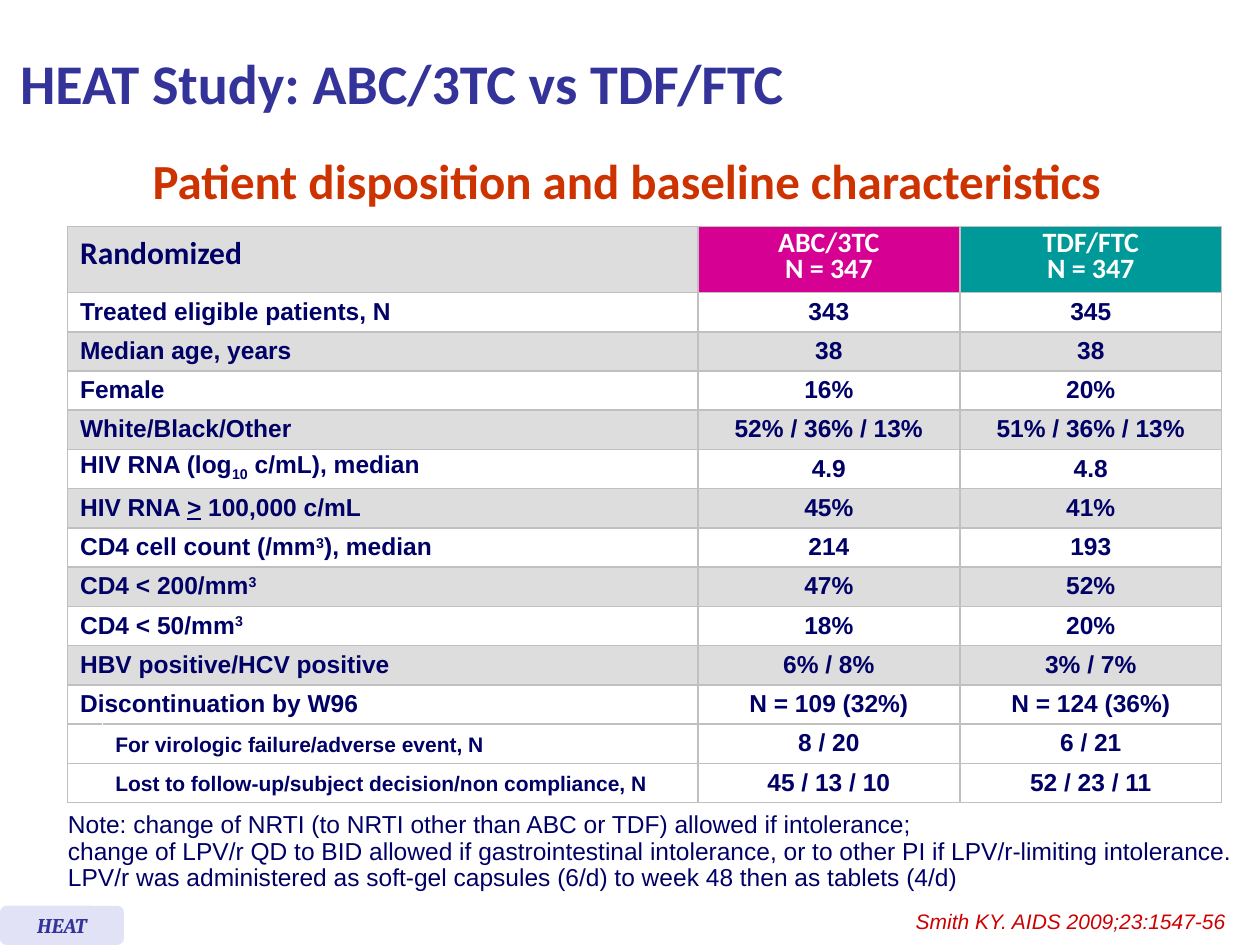
import pptx
import pptx.util
import pptx.dml.color
import pptx.enum.shapes
import pptx.enum.text
import pptx.oxml
import lxml.etree
from dataclasses import dataclass

Cm = pptx.util.Cm
Pt = pptx.util.Pt
Align = pptx.enum.text.PP_ALIGN
Anchor = pptx.enum.text.MSO_ANCHOR
SPACE = "http://schemas.openxmlformats.org/drawingml/2006/main"


@dataclass(frozen=True)
class Theme:
    """Hold the colours, fonts and type sizes."""
    title: str = "333399"
    lead: str = "CC3300"
    ink: str = "000066"
    cite: str = "CC0000"
    white: str = "FFFFFF"
    band: str = "DDDDDD"
    rule: str = "C0C0C0"
    tag: str = "E2E2F6"
    arms: tuple = ("D60093", "009999")
    head: str = "Calibri"
    body: str = "Arial"
    mark: str = "Cambria"
    huge: int = 32
    large: int = 28
    label: int = 18
    arm: int = 16
    text: int = 14
    small: int = 12
    lead_gap: float = 15.2


LOOK = Theme()

ROWS = [
    (["Treated eligible patients, N"], "343", "345"),
    (["Median age, years"], "38", "38"),
    (["Female"], "16%", "20%"),
    (["White/Black/Other"], "52% / 36% / 13%", "51% / 36% / 13%"),
    (["HIV RNA (log", ("10", "sub"), " c/mL), median"], "4.9", "4.8"),
    (["HIV RNA ", (">", "under"), " 100,000 c/mL"], "45%", "41%"),
    (["CD4 cell count (/mm", ("3", "sup"), "), median"], "214", "193"),
    (["CD4 < 200/mm", ("3", "sup")], "47%", "52%"),
    (["CD4 < 50/mm", ("3", "sup")], "18%", "20%"),
    (["HBV positive/HCV positive"], "6% / 8%", "3% / 7%"),
    (["Discontinuation by W96"], "N = 109 (32%)", "N = 124 (36%)"),
]
CAUSES = [
    (["For virologic failure/adverse event, N"], "8 / 20", "6 / 21"),
    (["Lost to follow-up/subject decision/non compliance, N"],
     "45 / 13 / 10", "52 / 23 / 11"),
]
NOTES = [
    "Note: change of NRTI (to NRTI other than ABC or TDF) allowed if intolerance;",
    "change of LPV/r QD to BID allowed if gastrointestinal intolerance, "
    "or to other PI if LPV/r-limiting intolerance.",
    "LPV/r was administered as soft-gel capsules (6/d) to week 48 then as tablets (4/d)",
]


def tint(code):
    """Turn a hex code into a colour."""
    return pptx.dml.color.RGBColor.from_string(code)


def style(para, face, size, color, bold=False, slant=False, align=Align.LEFT, gap=None):
    """Format one paragraph."""
    para.alignment = align
    if gap is not None:
        para.line_spacing = gap
    font = para.font
    font.name, font.size, font.bold, font.italic = face, Pt(size), bold, slant
    font.color.rgb = tint(color)


def panel(slide, box, lines, wrap=True, **look):
    """Add a text box with one paragraph per line."""
    frame = slide.shapes.add_textbox(*map(Cm, box)).text_frame
    frame.word_wrap = wrap
    frame.text = "\n".join(lines)
    for para in frame.paragraphs:
        style(para, **look)


def heading(slide, box):
    """Place the slide title."""
    shape = slide.shapes.title
    shape.left, shape.top, shape.width, shape.height = map(Cm, box)
    shape.text_frame.vertical_anchor = Anchor.MIDDLE
    para = shape.text_frame.paragraphs[0]
    para.text = "HEAT Study: ABC/3TC vs TDF/FTC"
    style(para, LOOK.head, LOOK.huge, LOOK.title, bold=True)


def border(cell, sides):
    """Draw rules on the given sides of a cell."""
    props = cell._tc.get_or_add_tcPr()
    for side in sides:
        props.append(pptx.oxml.parse_xml(
            f'<a:ln{side} xmlns:a="{SPACE}" w="12700"><a:solidFill>'
            f'<a:srgbClr val="{LOOK.rule}"/></a:solidFill></a:ln{side}>'))


def paint(cell, fill, sides="LRTB"):
    """Give a cell its rules, fill and anchor."""
    border(cell, sides)
    cell.fill.solid()
    cell.fill.fore_color.rgb = tint(fill)
    cell.vertical_anchor = Anchor.MIDDLE


def write(cell, parts, face=LOOK.body, size=LOOK.text, color=LOOK.ink, align=Align.LEFT):
    """Fill a cell with plain and marked runs."""
    para = cell.text_frame.paragraphs[0]
    style(para, face, size, color, bold=True, align=align, gap=Pt(LOOK.lead_gap))
    for part in parts:
        words, mark = part if isinstance(part, tuple) else (part, None)
        run = para.add_run()
        run.text = words
        if mark == "under":
            run.font.underline = True
        elif mark:
            shift = {"sub": "-25000", "sup": "30000"}[mark]
            run._r.get_or_add_rPr().set("baseline", shift)


def grid(slide, box):
    """Place the table of baseline data."""
    left, top, width, height = box
    body = ROWS + CAUSES
    table = slide.shapes.add_table(len(body) + 1, 4, *map(Cm, box)).table
    table.first_row = table.horz_banding = False
    inset, arm = 0.71, 5.28
    for col, size in zip(table.columns, (inset, width - inset - 2 * arm, arm, arm)):
        col.width = Cm(size)
    first = 1.32
    for num, row in enumerate(table.rows):
        row.height = Cm(first if num == 0 else (height - first) / len(body))

    for col in range(2):
        paint(table.cell(0, col), LOOK.band)
    table.cell(0, 0).merge(table.cell(0, 1))
    write(table.cell(0, 0), ["Randomized"], LOOK.head, LOOK.label)
    for col, name in enumerate(("ABC/3TC", "TDF/FTC")):
        cell = table.cell(0, col + 2)
        paint(cell, LOOK.arms[col])
        write(cell, [name], LOOK.head, LOOK.arm, LOOK.white, Align.CENTER)
        para = cell.text_frame.paragraphs[0]
        para.add_line_break()
        para.add_run().text = "N = 347"

    for num, (label, *values) in enumerate(body, 1):
        cause = num > len(ROWS)
        fill = LOOK.white if cause or num % 2 else LOOK.band
        for col in range(4):
            sides = {0: "LTB", 1: "RTB"}.get(col, "LRTB") if cause else "LRTB"
            paint(table.cell(num, col), fill, sides)
        if cause:
            write(table.cell(num, 0), [], size=LOOK.small)
            write(table.cell(num, 1), label, size=LOOK.small)
        else:
            table.cell(num, 0).merge(table.cell(num, 1))
            write(table.cell(num, 0), label)
        for col, value in enumerate(values, 2):
            write(table.cell(num, col), [value], align=Align.CENTER)


def badge(slide, box):
    """Place the study tag."""
    kind = pptx.enum.shapes.MSO_SHAPE.ROUNDED_RECTANGLE
    shape = slide.shapes.add_shape(kind, *map(Cm, box))
    shape.shadow.inherit = False
    shape.fill.solid()
    shape.fill.fore_color.rgb = tint(LOOK.tag)
    shape.line.fill.background()
    shape.text_frame.vertical_anchor = Anchor.MIDDLE
    para = shape.text_frame.paragraphs[0]
    para.text = "HEAT"
    style(para, LOOK.mark, LOOK.small, LOOK.title, True, True, Align.CENTER)


def main():
    """Build and save the slide."""
    deck = pptx.Presentation()
    deck.slide_width, deck.slide_height = Cm(25.4), Cm(19.05)
    slide = deck.slides.add_slide(deck.slide_layouts[5])
    heading(slide, (0.15, 0.13, 22.76, 3.07))
    grid(slide, (1.36, 4.57, 23.27, 11.6))
    panel(slide, (1.12, 16.26, 24.13, 1.85), NOTES,
          face=LOOK.body, size=LOOK.text, color=LOOK.ink, gap=0.9)
    panel(slide, (2.69, 3.56, 19.89, 0.79),
          ["Patient disposition and baseline characteristics"],
          face=LOOK.head, size=LOOK.large, color=LOOK.lead, bold=True,
          align=Align.CENTER, gap=Pt(LOOK.lead_gap))
    badge(slide, (0, 18.26, 2.5, 0.79))
    panel(slide, (18.21, 18.19, 6.81, 0.76), ["Smith KY. AIDS 2009;23:1547-56"],
          wrap=False, face=LOOK.body, size=LOOK.small, color=LOOK.cite, slant=True)
    deck.save("out.pptx")


if __name__ == "__main__":
    main()
